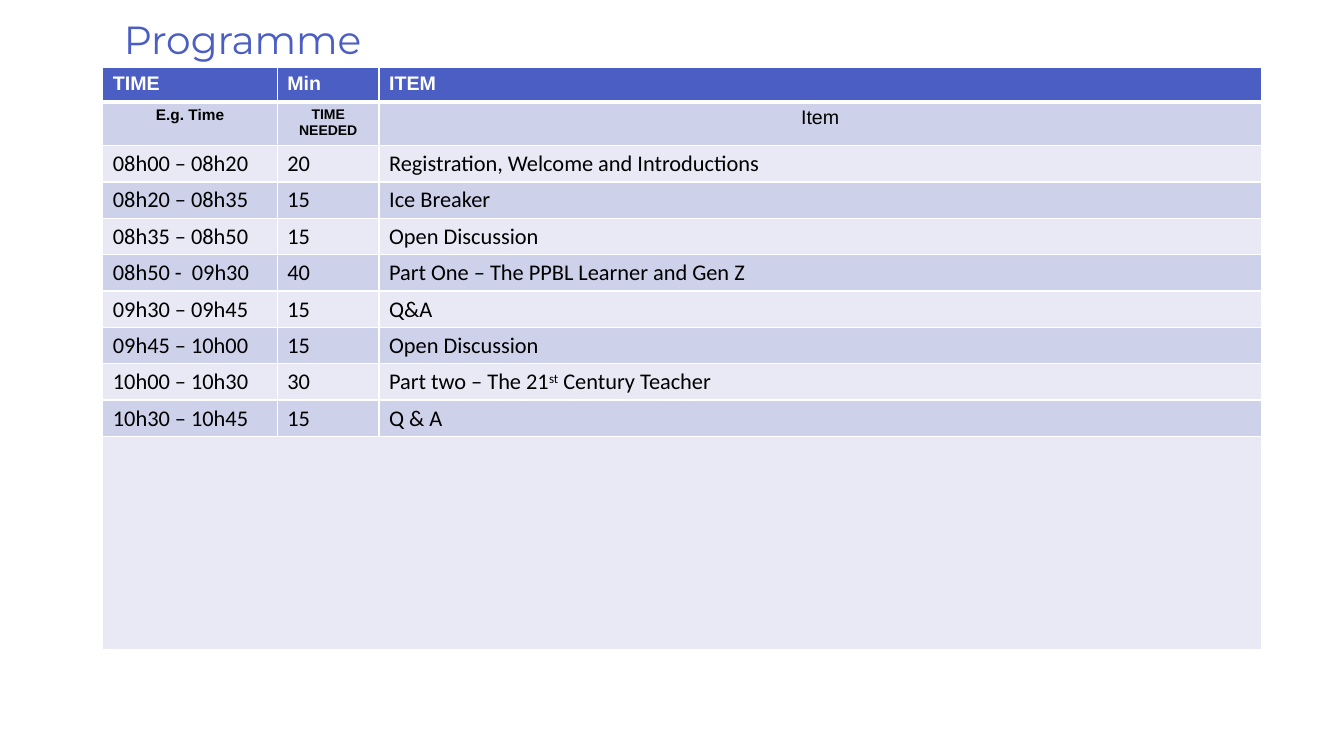
from lxml import etree
from pptx import Presentation
from pptx.dml.color import RGBColor
from pptx.enum.text import MSO_AUTO_SIZE, PP_ALIGN
from pptx.oxml.ns import qn
from pptx.util import Inches, Pt

CENTER, LEFT = PP_ALIGN.CENTER, PP_ALIGN.LEFT
FIT_SHAPE = MSO_AUTO_SIZE.SHAPE_TO_FIT_TEXT

THEME = {
    "accent": RGBColor(0x4B, 0x5E, 0xC4),
    "white": RGBColor(0xFF, 0xFF, 0xFF),
    "black": RGBColor(0, 0, 0),
    "bands": (RGBColor(0xE8, 0xE9, 0xF5), RGBColor(0xCE, 0xD1, 0xEA)),
    "title_font": "Montserrat",
    "label_font": "Arial",
    "body_font": "Calibri",
    "title_size": 28,
    "header_size": 14,
    "label_sizes": (11, 10, 14),
    "body_size": 16,
}
COLUMN_WIDTHS = (1.73, 1.01, 8.75)
HEADER = ("TIME", "Min", "ITEM")
LABELS = ("E.g. Time", "TIME NEEDED", "Item")
AGENDA = [
    ("08h00 – 08h20", "20", "Registration, Welcome and Introductions"),
    ("08h20 – 08h35", "15", "Ice Breaker"),
    ("08h35 – 08h50", "15", "Open Discussion"),
    ("08h50 -  09h30", "40", "Part One – The PPBL Learner and Gen Z"),
    ("09h30 – 09h45", "15", "Q&A"),
    ("09h45 – 10h00", "15", "Open Discussion"),
    ("10h00 – 10h30", "30", ("Part two – The 21", "st", " Century Teacher")),
    ("10h30 – 10h45", "15", "Q & A"),
]
ROWS = [HEADER, LABELS, *AGENDA]
ROW_HEIGHTS = [0.34, 0.43] + [0.34] * len(AGENDA) + [2.12]


def style_cell(cell, fill_color, bottom_width=1):
    """Give a cell white borders and a solid fill."""
    properties = cell._tc.get_or_add_tcPr()
    for side in ("lnL", "lnR", "lnT", "lnB"):
        width = bottom_width if side == "lnB" else 1
        line = etree.SubElement(properties, qn(f"a:{side}"), w=str(Pt(width)))
        line_fill = etree.SubElement(line, qn("a:solidFill"))
        etree.SubElement(line_fill, qn("a:srgbClr"), val=str(THEME["white"]))
    cell.fill.solid()
    cell.fill.fore_color.rgb = fill_color


def write_paragraph(paragraph, content, font_name, size, color, bold=False, alignment=LEFT):
    """Write one string, or a (text, superscript, text) triple."""
    parts = (content,) if isinstance(content, str) else content
    paragraph.alignment = alignment
    for index, part in enumerate(parts):
        run = paragraph.add_run()
        run.text = part
        if index == 1:
            run._r.get_or_add_rPr().set("baseline", "30000")
    font = paragraph.font
    font.name, font.size, font.bold = font_name, Pt(size), bold
    font.color.rgb = color


presentation = Presentation()
presentation.slide_width, presentation.slide_height = Inches(13.33), Inches(7.5)
slide = presentation.slides.add_slide(presentation.slide_layouts[6])

title = slide.shapes.add_textbox(Inches(1.13), Inches(0.1), Inches(5.59), Inches(0.63))
title_frame = title.text_frame
title_frame.word_wrap = True
title_frame.auto_size = FIT_SHAPE
title_frame.margin_left = title_frame.margin_right = Inches(0.1)
title_frame.margin_top = title_frame.margin_bottom = Inches(0.1)
title_paragraph = title_frame.paragraphs[0]
title_paragraph.line_spacing = 0.9
write_paragraph(title_paragraph, "Programme", THEME["title_font"], THEME["title_size"],
                THEME["accent"])

table = slide.shapes.add_table(
    len(ROW_HEIGHTS), len(COLUMN_WIDTHS),
    Inches(1.02), Inches(0.67), Inches(sum(COLUMN_WIDTHS)), Inches(sum(ROW_HEIGHTS)),
).table
for column, width in zip(table.columns, COLUMN_WIDTHS):
    column.width = Inches(width)
for row, height in zip(table.rows, ROW_HEIGHTS):
    row.height = Inches(height)

for row_index, contents in enumerate(ROWS):
    is_header, is_label = row_index == 0, row_index == 1
    fill_color = THEME["accent"] if is_header else THEME["bands"][row_index % 2]
    for column_index, content in enumerate(contents):
        cell = table.cell(row_index, column_index)
        style_cell(cell, fill_color, 3 if is_header else 1)
        paragraph = cell.text_frame.paragraphs[0]
        if is_header:
            write_paragraph(paragraph, content, THEME["label_font"], THEME["header_size"],
                            THEME["white"], bold=True)
        elif is_label:
            write_paragraph(paragraph, content, THEME["label_font"],
                            THEME["label_sizes"][column_index], THEME["black"],
                            bold=column_index < 2, alignment=CENTER)
        else:
            cell.margin_top = cell.margin_bottom = Pt(3.4)
            write_paragraph(paragraph, content, THEME["body_font"], THEME["body_size"],
                            THEME["black"])

closing_cell = table.cell(len(ROWS), 0)
closing_cell.merge(table.cell(len(ROWS), len(COLUMN_WIDTHS) - 1))
style_cell(closing_cell, THEME["bands"][0])

presentation.save("out.pptx")
